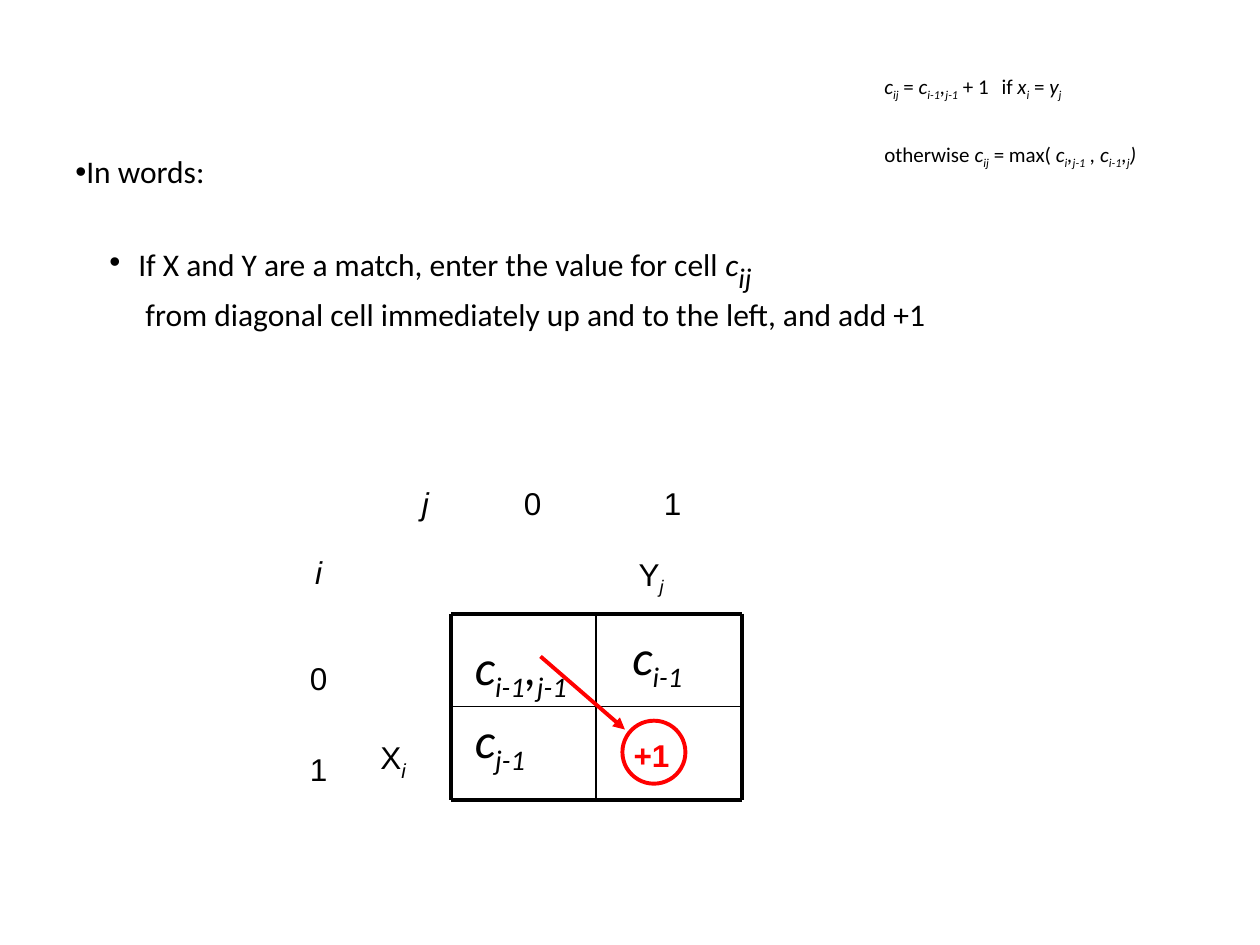
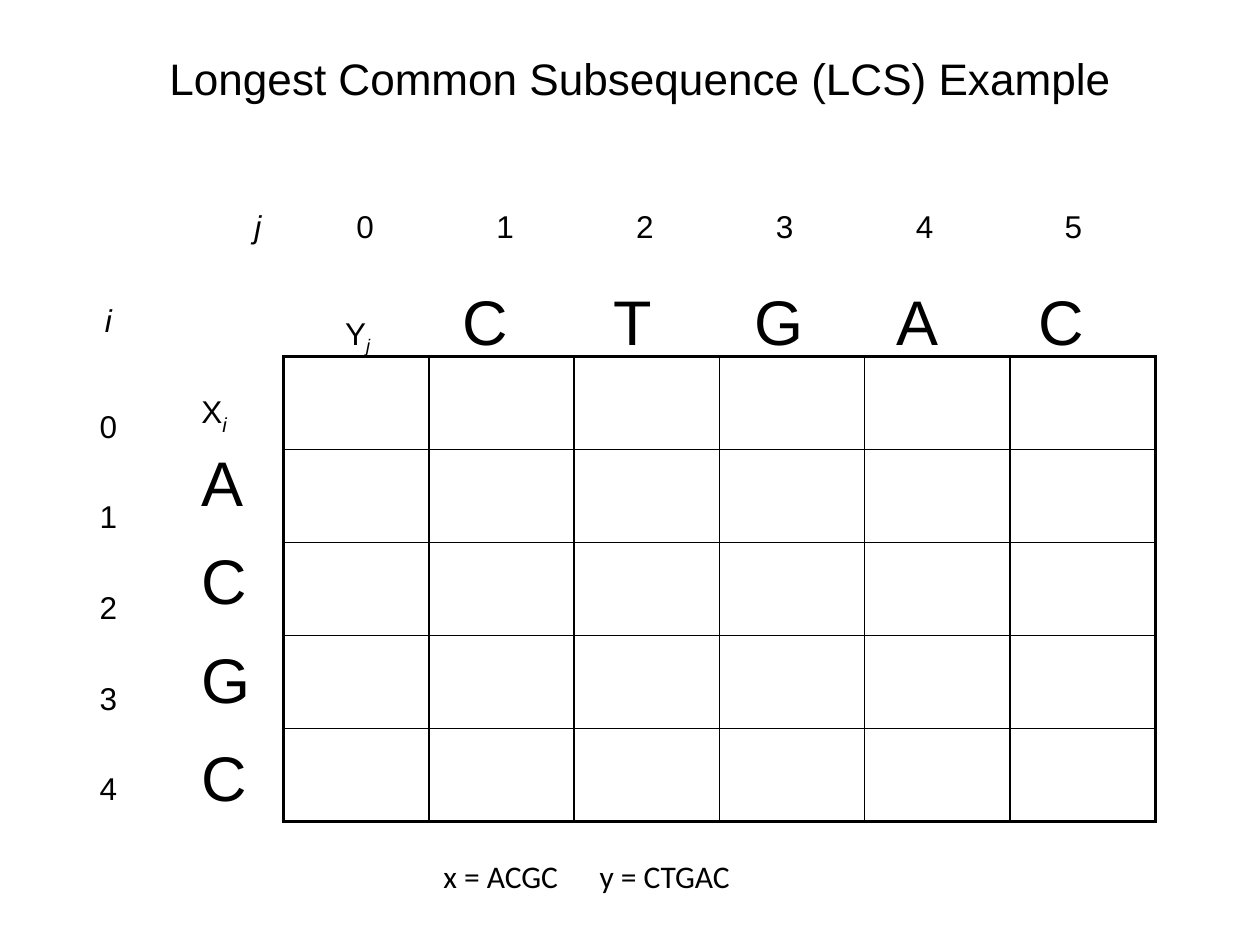
from lxml import etree
from pptx import Presentation
from pptx.dml.color import RGBColor
from pptx.enum.shapes import MSO_CONNECTOR, MSO_SHAPE
from pptx.enum.text import MSO_ANCHOR, PP_ALIGN
from pptx.oxml.ns import qn
from pptx.util import Inches, Pt

LEFT, CENTER = PP_ALIGN.LEFT, PP_ALIGN.CENTER
MIDDLE = MSO_ANCHOR.MIDDLE
STRAIGHT, OVAL = MSO_CONNECTOR.STRAIGHT, MSO_SHAPE.OVAL
TITLE_ONLY, BLANK = 5, 6

COLORS = {"ink": "000000", "paper": "FFFFFF", "match": "FF0000"}
HEAD, BODY = "Arial", "Calibri"
THICK, THIN = 2.25, 1
CELL_W, CELL_H = 6.92 / 6, 3.69 / 5

# A text is a string or a list of runs (text, style, own size if any);
# styles are i for italic and s for subscript.
Y_J = [("\tY", ""), ("j", "is")]
X_I = [("X", ""), ("i", "is", 20)]
INDEX_TABS = [0.81, 1.92, 3.03, 4.14, 5.25, 6.43]
LETTER_TABS = [0.14, 1.07, 2.27, 3.39, 4.52, 5.64]

# Slide 1: the rule and its cells
MATCH_RULE = [("c", "i"), ("ij", "is"), (" = ", ""), ("c", "i"), ("i-1", "is"),
              (",", "i"), ("j-1", "is"), (" + 1\tif ", ""), ("x", "i"), ("i", "is"),
              (" = ", ""), ("y", "i"), ("j", "is")]
OTHER_RULE = [("otherwise", ""), (" c", "i"), ("ij", "is"), (" = max( ", ""),
              ("c", "i"), ("i", "is"), (",", "i"), ("j-1", "is"), (" , ", "i"),
              ("c", "i"), ("i-1", "is"), (",", "i"), ("j", "is"), (")", "i")]
# text, left margin, indent, bullet, space before
WORDS = [
    ("In words:", 0, 0, True, 0),
    ([("If X and Y are a match, enter the value for cell ", ""), ("c", "i"),
      ("ij", "is", 28)], 0.5, -0.23, True, 21.5),
    (" from diagonal cell immediately up and to the left, and add +1", 0.5, 0, False, 0),
]
CELL_TEXTS = [
    (3.67, 5.0, [("c", "i"), ("i-1", "is"), (",", "i"), ("j-1", "is")]),
    (4.92, 4.92, [("c", "i"), ("i-1", "is")]),
    (3.67, 5.58, [("c", "i"), ("j-1", "is")]),
]

# Slide 2: the worked example
TITLE = "Longest Common Subsequence (LCS) Example"
X, Y = "ACGC", "CTGAC"


def rgb(name):
    return RGBColor.from_string(COLORS[name])


def write(p, text, size=18, font=BODY, color="ink", bold=False, align=LEFT,
          spacing=None, before=0, tabs=()):
    p.alignment = align
    p.space_before = Pt(before)
    if spacing:
        p.line_spacing = spacing
    if tabs:
        tab_list = etree.SubElement(p._p.get_or_add_pPr(), qn("a:tabLst"))
        for pos in tabs:
            etree.SubElement(tab_list, qn("a:tab"), pos=str(Inches(pos)), algn="l")
    for part, style, *own_size in [(text, "")] if isinstance(text, str) else text:
        r = p.add_run()
        r.text = part
        f = r.font
        f.name, f.bold, f.italic = font, bold, "i" in style
        f.size = Pt(own_size[0] if own_size else size)
        f.color.rgb = rgb(color)
        if "s" in style:
            r._r.get_or_add_rPr().set("baseline", "-25000")


def text_frame(s, x, y, w, h):
    tf = s.shapes.add_textbox(Inches(x), Inches(y), Inches(w), Inches(h)).text_frame
    tf.word_wrap = True
    return tf


def next_paragraph(tf, n):
    return tf.add_paragraph() if n else tf.paragraphs[0]


def add_text(s, text, x, y, w, h, **fmt):
    write(text_frame(s, x, y, w, h).paragraphs[0], text, **fmt)


def add_column_index(s, x, y, w, count):
    numbers = "".join(f"\t{k}" for k in range(count))
    add_text(s, [("j", "i"), (numbers, "")], x, y, w, 0.37, font=HEAD, spacing=0.9,
             tabs=INDEX_TABS[:count])


def add_row_index(s, x, y, h, count):
    tf = text_frame(s, x, y, 0.56, h)
    for n, label in enumerate([[("i", "i")], *map(str, range(count))]):
        write(next_paragraph(tf, n), label, font=HEAD, align=CENTER,
              spacing=2.8 if n == 1 else 2.4)


def add_line(s, x1, y1, x2, y2, width, color="ink", arrow=False):
    c = s.shapes.add_connector(STRAIGHT, Inches(x1), Inches(y1), Inches(x2), Inches(y2))
    c.line.color.rgb, c.line.width = rgb(color), Pt(width)
    if arrow:
        etree.SubElement(c.line._get_or_add_ln(), qn("a:tailEnd"), type="triangle")
    etree.SubElement(c._element.spPr, qn("a:effectLst"))


def add_rules(s):
    tf = text_frame(s, 6.92, 0.33, 2.42, 0.83)
    tf.margin_top = Inches(0.25)
    write(tf.paragraphs[0], MATCH_RULE, size=12, tabs=[0.93])
    write(tf.add_paragraph(), OTHER_RULE, size=12, before=22.5)


def add_words(s):
    tf = text_frame(s, 0.5, 1.16, 8.96, 1.7)
    for n, (text, margin, indent, bullet, before) in enumerate(WORDS):
        p = next_paragraph(tf, n)
        write(p, text, before=before)
        pPr = p._p.get_or_add_pPr()
        pPr.set("marL", str(Inches(margin)))
        pPr.set("indent", str(Inches(indent)))
        if bullet:
            etree.SubElement(pPr, qn("a:buFont"), typeface=HEAD)
            etree.SubElement(pPr, qn("a:buChar"), char="•")


def add_line_grid(s, left, top, n):
    right, bottom = left + n * CELL_W, top + n * CELL_H
    for k in range(n + 1):
        width = THICK if k in (0, n) else THIN
        x, y = left + k * CELL_W, top + k * CELL_H
        add_line(s, left, y, right, y, width)
        add_line(s, x, top, x, bottom, width)


def set_borders(cell, widths):
    tcPr = cell._tc.get_or_add_tcPr()
    for n, (side, width) in enumerate(widths.items()):
        ln = etree.Element(qn("a:ln" + side), w=str(Pt(width)))
        fill = etree.SubElement(ln, qn("a:solidFill"))
        etree.SubElement(fill, qn("a:srgbClr"), val=COLORS["ink"])
        tcPr.insert(n, ln)


def add_score_table(s, left, top, rows, cols):
    table = s.shapes.add_table(rows, cols, Inches(left), Inches(top),
                               Inches(cols * CELL_W), Inches(rows * CELL_H)).table
    table.first_row = table.horz_banding = False
    for r in range(rows):
        for c in range(cols):
            cell = table.cell(r, c)
            cell.fill.background()
            outer = {"L": c == 0, "R": c == cols - 1, "T": r == 0, "B": r == rows - 1}
            set_borders(cell, {side: THICK if edge else THIN for side, edge in outer.items()})


def build_rule_slide(prs):
    s = prs.slides.add_slide(prs.slide_layouts[BLANK])
    add_rules(s)
    add_text(s, Y_J, 4.83, 4.25, 0.75, 0.62, font=HEAD, spacing=1.3, tabs=LETTER_TABS[:1])
    add_text(s, X_I, 2.92, 5.67, 0.56, 0.62, font=HEAD, spacing=1.3)
    add_row_index(s, 2.25, 3.92, 2.38, 2)
    add_column_index(s, 3.25, 3.83, 2.58, 2)
    add_line_grid(s, 3.58, 4.87, 2)
    add_words(s)
    for x, y, text in CELL_TEXTS:
        add_text(s, text, x, y, 1.15, 0.57, size=28)
    add_line(s, 4.29, 5.21, 4.96, 5.79, THICK, color="match", arrow=True)
    ring = s.shapes.add_shape(OVAL, Inches(4.94), Inches(5.72), Inches(0.5), Inches(0.5))
    ring.shadow.inherit = False
    ring.fill.solid()
    ring.fill.fore_color.rgb = rgb("paper")
    ring.line.color.rgb, ring.line.width = rgb("match"), Pt(THICK)
    add_text(s, "+1", 4.93, 5.79, 0.56, 0.4, font=HEAD, color="match", bold=True)


def build_example_slide(prs):
    s = prs.slides.add_slide(prs.slide_layouts[TITLE_ONLY])
    title = s.shapes.title
    title.left, title.top, title.width, title.height = map(Inches, (0.83, 0.33, 8.5, 0.58))
    title.text_frame.vertical_anchor = MIDDLE
    write(title.text_frame.paragraphs[0], TITLE, size=25.2, font=HEAD, align=CENTER)

    y_letters = "".join(f"\t{letter}" for letter in Y)
    add_text(s, [*Y_J, (y_letters, "", 36)], 2.5, 2.01, 6.42, 0.88, font=HEAD,
             spacing=1.3, tabs=LETTER_TABS)
    add_row_index(s, 0.58, 1.92, 4.54, len(X) + 1)
    add_column_index(s, 1.92, 1.63, 7.25, len(Y) + 1)
    add_score_table(s, 2.25, 2.83, len(X) + 1, len(Y) + 1)
    add_text(s, f"x = {X}\ty = {Y}", 3.42, 6.75, 3.8, 0.5, tabs=[1.24])
    tf = text_frame(s, 1.5, 2.92, 0.56, 3.62)
    for n, label in enumerate([X_I, *X]):
        write(next_paragraph(tf, n), label, size=36 if n else 18, font=HEAD,
              spacing=1.1 if n == 1 else 1.3)


def main():
    prs = Presentation()
    prs.slide_width, prs.slide_height = Inches(10), Inches(7.5)
    build_rule_slide(prs)
    build_example_slide(prs)
    prs.save("out.pptx")


if __name__ == "__main__":
    main()
